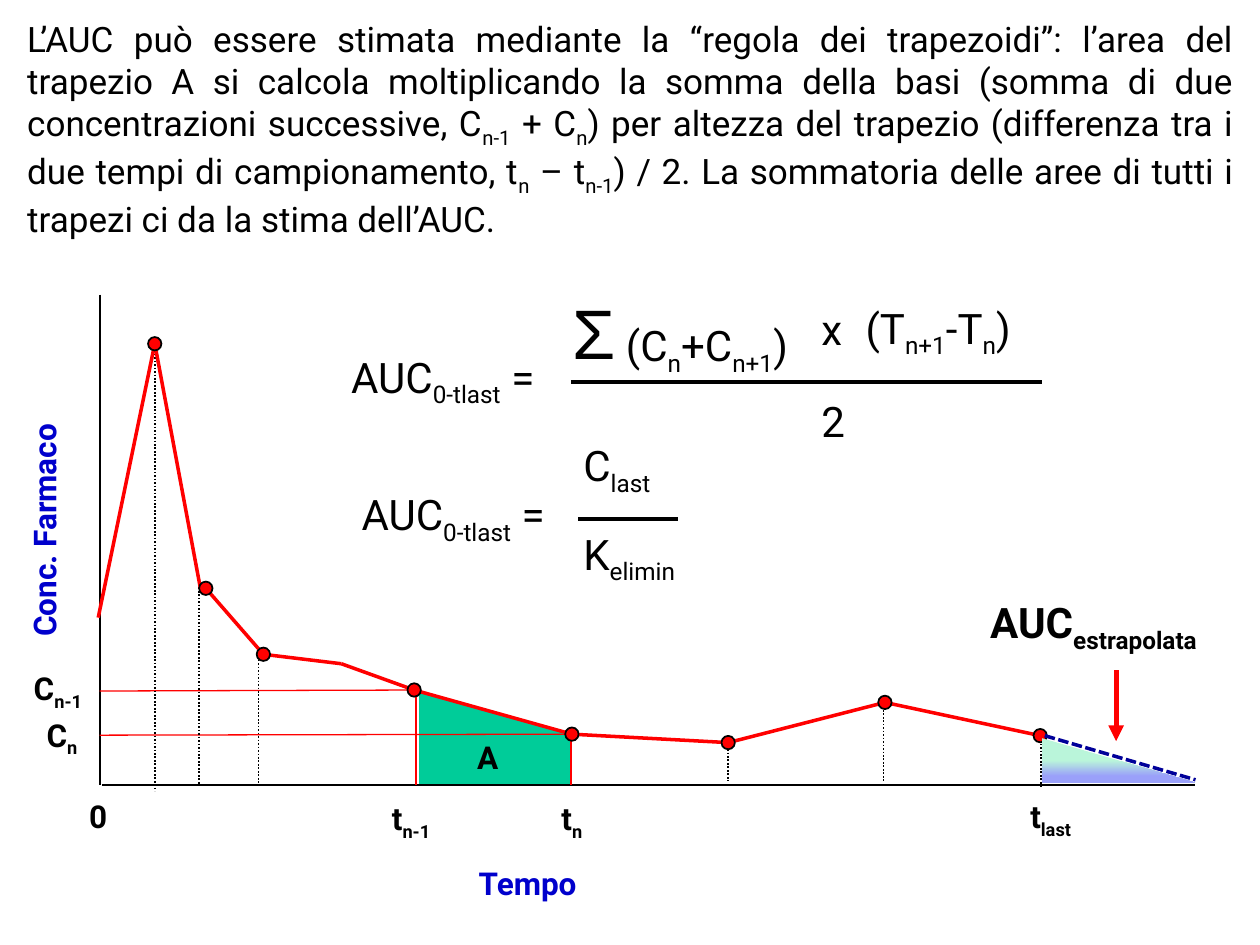
from itertools import pairwise

from pptx import Presentation
from pptx.dml.color import RGBColor as RGB
from pptx.enum.dml import MSO_LINE as DASH
from pptx.enum.shapes import MSO_CONNECTOR as LINK, MSO_SHAPE as FORM
from pptx.enum.text import MSO_AUTO_SIZE as AUTO, PP_ALIGN as ALIGN
from pptx.oxml.ns import qn
from pptx.util import Cm, Pt
from lxml.etree import SubElement

HUES = {
    "ink": "000000", "red": "FF0000", "green": "00CC99", "blue": "0000CC",
    "navy": "000099", "mint": "BAF5DA", "lilac": "9AA0FA",
}

# Text between bars is subscript
BODY = (
    "L’AUC può essere stimata mediante la “regola dei trapezoidi”: l’area del "
    "trapezio A si calcola moltiplicando la somma della basi (somma di due "
    "concentrazioni successive, C|n-1| + C|n|) per altezza del trapezio "
    "(differenza tra i due tempi di campionamento, t|n| – t|n-1|) / 2. "
    "La sommatoria delle aree di tutti i trapezi ci da la stima dell’AUC."
)

# Axes and measured points, in cm
LEFT, BASE = 2.01, 15.82
START, PEAK = (1.98, 12.45), (3.12, 6.93)
FALL, NEXT = (4.04, 11.86), (4.15, 11.86)
SLOW, BEND = (5.31, 13.19), (6.88, 13.38)
PREV, HERE = (8.35, 13.91), (11.53, 14.8)
LOW, RISE, LAST = (14.68, 14.97), (17.84, 14.16), (20.97, 14.83)
CURVE = [START, PEAK, FALL, NEXT, SLOW, BEND, PREV, HERE, LOW, RISE, LAST]
MARKS = [PEAK, NEXT, SLOW, PREV, HERE, LOW, RISE, LAST]
DOT = 0.27

# Dotted drops: x, top, bottom
DROPS = [
    (3.12, 6.99, 15.95), (4.01, 11.84, 15.8), (5.21, 13.16, 15.8),
    (14.68, 14.96, 15.75), (17.81, 14.17, 15.75), (20.98, 14.99, 15.88),
]

# Axis labels: text, left, top, width
LABELS = [
    ("t|n-1", 7.65, 15.98, 1.5), ("t|n", 11.07, 15.98, 1.04),
    ("C|n", 0.69, 14.3, 1.22), ("C|n-1", 0.43, 13.36, 1.68),
    ("A", 9.37, 14.76, 0.97), ("0", 1.55, 15.95, 0.91),
    ("t|last", 20.52, 15.95, 1.55),
]

# Formula parts: text, left, top, width
TERMS = [
    ("AUC|0-tlast| =", 6.83, 6.96, 5.26), ("(T|n+1|-T|n|)", 17.2, 5.97, 4.5),
    ("x", 16.31, 5.99, 1.47), ("2", 16.31, 7.85, 1.4),
    ("AUC|0-tlast| =", 7.04, 9.73, 5.26), ("C|last", 11.51, 8.74, 2.79),
    ("K|elimin", 11.51, 10.52, 3.2),
]


def hue(name):
    return RGB.from_string(HUES[name])


def write(slide, text, x, y, w, h, size, color="ink", bold=False, wrap=True,
          font="Roboto", pad=True, align=None, space=None):
    box = slide.shapes.add_textbox(Cm(x), Cm(y), Cm(w), Cm(h))
    frame = box.text_frame
    frame.word_wrap = wrap
    frame.auto_size = AUTO.SHAPE_TO_FIT_TEXT
    if not pad:
        frame.margin_left = frame.margin_right = 0
        frame.margin_top = frame.margin_bottom = 0
    para = frame.paragraphs[0]
    para.alignment = align
    para.line_spacing = space
    for i, part in enumerate(text.split("|")):
        run = para.add_run()
        run.text = part
        run.font.name = font
        run.font.size = Pt(size)
        run.font.bold = bold
        run.font.color.rgb = hue(color)
        if i % 2:
            run._r.get_or_add_rPr().set("baseline", "-25000")
    return box


def rule(slide, start, end, color="ink", width=1, dash=None, arrow=False):
    ends = [Cm(v) for v in (*start, *end)]
    line = slide.shapes.add_connector(LINK.STRAIGHT, *ends)
    line.line.color.rgb = hue(color)
    line.line.width = Pt(width)
    if dash:
        line.line.dash_style = dash
    if arrow:
        SubElement(line.line._get_or_add_ln(), qn("a:tailEnd"), type="triangle")
    SubElement(line._element.spPr, qn("a:effectLst"))


def mark(slide, x, y):
    dot = slide.shapes.add_shape(
        FORM.OVAL, Cm(x - DOT / 2), Cm(y - DOT / 2), Cm(DOT), Cm(DOT))
    dot.shadow.inherit = False
    dot.fill.solid()
    dot.fill.fore_color.rgb = hue("red")
    dot.line.color.rgb = hue("ink")
    dot.line.width = Pt(1)


def area(slide, points):
    first, *rest = [(Cm(x), Cm(y)) for x, y in points]
    pen = slide.shapes.build_freeform(*first)
    pen.add_line_segments(rest, close=True)
    shape = pen.convert_to_shape()
    shape.shadow.inherit = False
    shape.fill.solid()
    shape.fill.fore_color.rgb = hue("green")
    shape.line.fill.background()


def tail(slide):
    shape = slide.shapes.add_shape(
        FORM.RIGHT_TRIANGLE, Cm(21), Cm(14.88), Cm(3.1), Cm(0.9))
    shape.shadow.inherit = False
    shape.line.fill.background()
    shape.fill.gradient()
    shape.fill.gradient_angle = 270
    stops = shape.fill.gradient_stops
    for stop, color, place in zip(stops, ("mint", "lilac"), (0.5, 0.85)):
        stop.color.rgb = hue(color)
        stop.position = place


def chart(slide):
    # Trapezoid A
    area(slide, [(8.45, 13.94), HERE, (HERE[0], BASE), (8.45, BASE)])
    # Axes
    rule(slide, (LEFT, 5.94), (LEFT, BASE))
    rule(slide, (2.06, BASE), (24.08, BASE))
    # Guides
    for x, y in (PREV, HERE):
        rule(slide, (x, y), (LEFT, y + 0.02), "red", 0.75)
    rule(slide, (8.38, 13.91), (8.38, BASE), "red")
    rule(slide, (11.51, 14.8), (11.51, BASE), "red")
    for x, top, foot in DROPS:
        rule(slide, (x, top), (x, foot), dash=DASH.ROUND_DOT)
    # Curve and its points
    for start, end in pairwise(CURVE):
        rule(slide, start, end, "red", 2)
    for x, y in MARKS:
        mark(slide, x, y)
    # Extrapolated part
    tail(slide)
    rule(slide, (21.06, 14.83), (24.1, 15.72), "navy", 2, DASH.SQUARE_DOT)
    rule(slide, (22.5, 13.51), (22.5, 14.94), "red", 3, arrow=True)
    write(slide, "AUC|estrapolata", 19.71, 11.91, 5.56, 1.28, 24,
          bold=True, wrap=False)
    # Labels and axis titles
    for text, x, y, w in LABELS:
        write(slide, text, x, y, w, 1.02, 18, bold=True, wrap=False)
    name = dict(size=18, color="blue", bold=True, wrap=False, pad=False)
    write(slide, "Tempo", 9.65, 17.42, 2.18, 0.76, **name)
    side = write(slide, "Conc. Farmaco", -1.57, 10.01, 4.9, 0.76, **name)
    side.rotation = 270


def formula(slide):
    for text, x, y, w in TERMS:
        write(slide, text, x, y, w, 1.28, 24)
    write(slide, "(C|n|+C|n+1|)", 12.37, 5.74, 4.98, 1.8, 24, space=1.5)
    write(slide, "Σ", 11.3, 5.72, 1.65, 1.96, 40, font="Arial")
    # Fraction bars
    rule(slide, (11.51, 7.7), (21.01, 7.7), width=2)
    rule(slide, (11.66, 10.46), (13.67, 10.46), width=2)


def main():
    deck = Presentation()
    deck.slide_width, deck.slide_height = Cm(25.4), Cm(19.05)
    slide = deck.slides.add_slide(deck.slide_layouts[6])
    write(slide, BODY, 0.3, 0.23, 24.82, 4.52, 20, align=ALIGN.JUSTIFY)
    chart(slide)
    formula(slide)
    deck.save("out.pptx")


if __name__ == "__main__":
    main()
